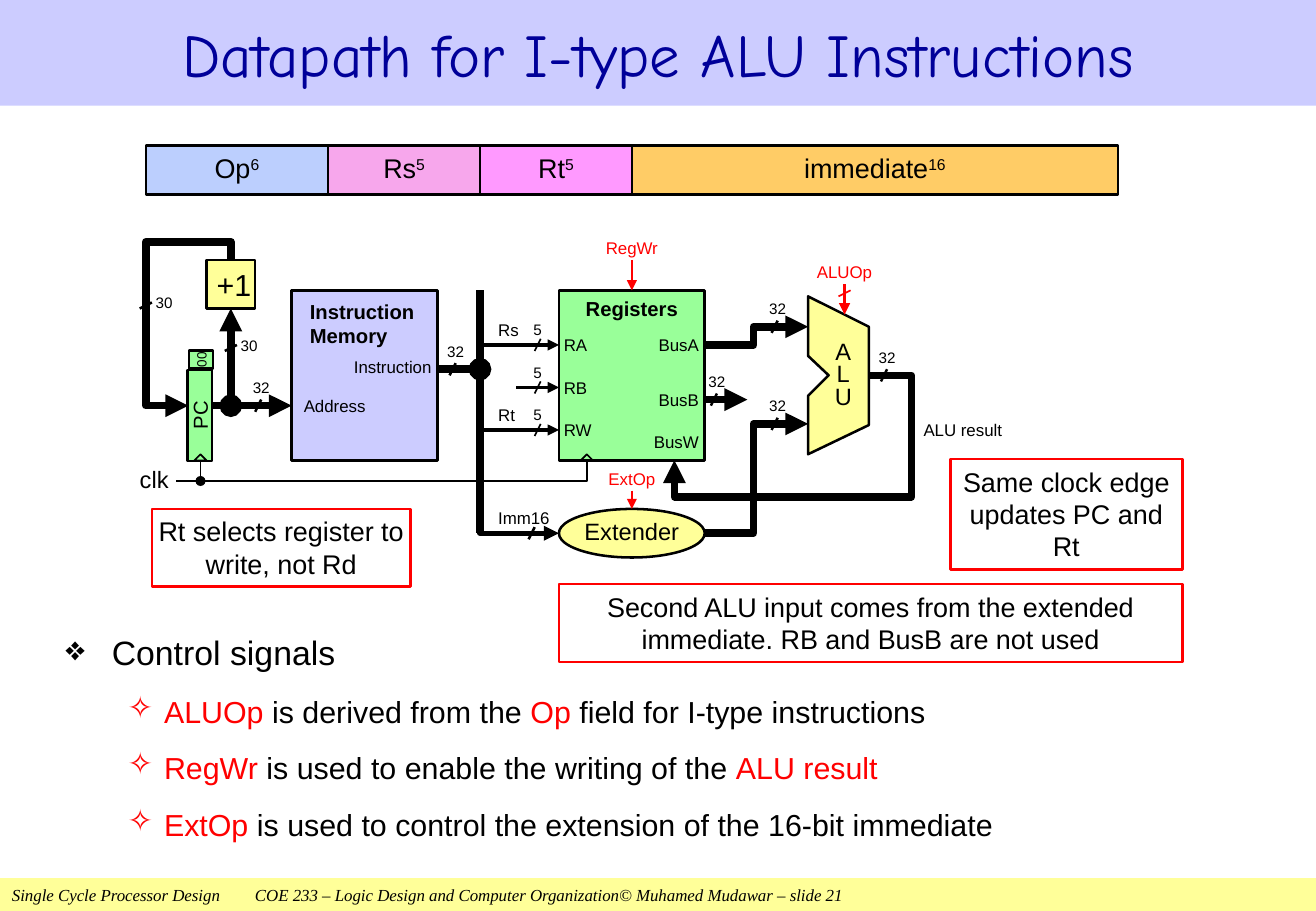
import pptx
import pptx.dml.color
import pptx.enum.dml
import pptx.enum.shapes
import pptx.enum.text
import pptx.oxml.ns
import pptx.util
from lxml import etree

RGBColor = pptx.dml.color.RGBColor
Pt = pptx.util.Pt
SHAPE = pptx.enum.shapes.MSO_SHAPE
ALIGN = pptx.enum.text.PP_ALIGN
ANCHOR = pptx.enum.text.MSO_ANCHOR
qn = pptx.oxml.ns.qn

BLACK = RGBColor(0x00, 0x00, 0x00)
RED = RGBColor(0xFF, 0x00, 0x00)
NAVY = RGBColor(0x00, 0x00, 0x99)
LAVENDER = RGBColor(0xCC, 0xCC, 0xFF)
YELLOW = RGBColor(0xFF, 0xFF, 0x99)
GREEN = RGBColor(0x99, 0xFF, 0x99)
BLUE = RGBColor(0xBC, 0xCF, 0xFE)
PINK = RGBColor(0xF7, 0xA7, 0xEC)
MAGENTA = RGBColor(0xFF, 0x99, 0xFF)
ORANGE = RGBColor(0xFF, 0xCC, 0x66)

CM_PER_UNIT = 2.54
NO_INSET = (0, 0)


def cm(units):
    return pptx.util.Cm(units * CM_PER_UNIT)


def set_text(s, text, size=10, color=BLACK, align=ALIGN.LEFT, font="Arial", bold=None,
             italic=None, inset=NO_INSET, anchor=ANCHOR.MIDDLE, spacing=None, wrap=True):
    tf = s.text_frame
    tf.word_wrap = wrap
    tf.vertical_anchor = anchor
    tf.margin_left = tf.margin_right = cm(inset[0])
    tf.margin_top = tf.margin_bottom = cm(inset[1])
    tf.text = text
    for p in tf.paragraphs:
        p.alignment = align
        p.line_spacing = spacing
        p.font.size = Pt(size)
        p.font.name = font
        p.font.color.rgb = color
        p.font.bold = bold
        p.font.italic = italic
    return s


def add_label(sp, text, x, y, w, h, **style):
    return set_text(sp.add_textbox(cm(x), cm(y), cm(w), cm(h)), text, **style)


def set_paint(s, fill, line, width):
    s.shadow.inherit = False
    if fill is None:
        s.fill.background()
    else:
        s.fill.solid()
        s.fill.fore_color.rgb = fill
    if line is None:
        s.line.fill.background()
    else:
        s.line.color.rgb = line
        s.line.width = Pt(width)
    return s


def add_box(sp, x, y, w, h, fill=None, line=BLACK, width=1.5, kind=SHAPE.RECTANGLE):
    s = sp.add_shape(kind, cm(x), cm(y), cm(w), cm(h))
    return set_paint(s, fill, line, width)


def set_ends(s, head, tail):
    ln = s.line._get_or_add_ln()
    for tag, end in (("a:headEnd", head), ("a:tailEnd", tail)):
        if end:
            etree.SubElement(ln, qn(tag), type=end)


def add_line(sp, x1, y1, x2, y2, width=4.5, color=BLACK, head=None, tail=None):
    s = sp.add_connector(pptx.enum.shapes.MSO_CONNECTOR.STRAIGHT, cm(x1), cm(y1), cm(x2), cm(y2))
    s.line.color.rgb = color
    s.line.width = Pt(width)
    set_ends(s, head, tail)
    etree.SubElement(s._element.spPr, qn("a:effectLst"))
    return s


def add_path(sp, points, width=4.5, fill=None, tail="triangle", close=False):
    start, *rest = [(cm(x), cm(y)) for x, y in points]
    builder = sp.build_freeform(*start)
    builder.add_line_segments(rest, close=close)
    s = set_paint(builder.convert_to_shape(), fill, BLACK, width)
    set_ends(s, None, tail)
    return s


def add_bits(sp, bits, x, y, width=1.5, height=0.2):
    add_line(sp, x + 0.025, y - 0.05, x - 0.025, y + 0.05, width)
    add_label(sp, bits, x - 0.075, y - 0.05 - height, height, height, size=9, align=ALIGN.CENTER)


def add_side_bits(sp, bits, x, y):
    add_line(sp, x + 0.05, y - 0.025, x - 0.05, y + 0.025, 1.5)
    add_label(sp, bits, x + 0.05, y - 0.125, 0.2, 0.2, size=9, align=ALIGN.CENTER)


def add_control(sp, text, x, y, length, width=1, target=None):
    label = add_label(sp, text, x - 0.4, y, 0.8, 0.2, color=RED, align=ALIGN.CENTER)
    s = add_line(sp, x, y + 0.2, x, y + 0.2 + length, width, RED, tail="triangle")
    s.begin_connect(label, 2)
    if target is not None:
        s.end_connect(target, 0)


def add_callout(sp, text, x, y, w, h, side=0.1):
    s = add_box(sp, x, y, w, h, line=RED)
    set_text(s, text, 16, align=ALIGN.CENTER, inset=(side, 0.05), anchor=ANCHOR.TOP)


def add_frame(sp):
    s = add_box(sp, 0, 0, 10.83, 0.87, LAVENDER, None)
    set_text(s, "Datapath for I-type ALU Instructions", 36, NAVY, ALIGN.CENTER, "Comic Neue", inset=(0, 0.05))
    s = add_box(sp, 0, 7.23, 10.83, 0.27, YELLOW, None)
    set_text(s, "Single Cycle Processor Design\tCOE 233 – Logic Design and Computer Organization"
             "© Muhamed Mudawar – slide 21", font="Times New Roman", italic=True, inset=(0.1, 0))
    pPr = s.text_frame.paragraphs[0]._p.get_or_add_pPr()
    tabs = etree.Element(qn("a:tabLst"))
    etree.SubElement(tabs, qn("a:tab"), pos=str(cm(2)), algn="l")
    pPr.insert(0, tabs)


def add_format(sp):
    x = 1.2
    for field, bits, w, fill in (("Op", "6", 1.5, BLUE), ("Rs", "5", 1.25, PINK),
                                 ("Rt", "5", 1.25, MAGENTA), ("immediate", "16", 4, ORANGE)):
        s = set_text(add_box(sp, x, 1.2, w, 0.4, fill), field, 16, align=ALIGN.CENTER, spacing=0.85)
        r = s.text_frame.paragraphs[0].add_run()
        r.text = bits
        r._r.get_or_add_rPr().set("baseline", "30000")
        x += w


def add_fetch(sp):
    add_path(sp, [(1.9, 2.14), (1.9, 1.99), (1.2, 1.99), (1.2, 3.34), (1.55, 3.34)])
    add_side_bits(sp, "30", 1.2, 2.515)
    for text, size, x, y, w in (("PC", 12, 1.27, 3.32, 0.75), ("00", 8, 1.58, 2.86, 0.15)):
        s = set_text(add_box(sp, x, y, w, 0.2, GREEN), text, size, align=ALIGN.CENTER, wrap=False)
        s.rotation = 270
    plus = add_box(sp, 1.7, 2.14, 0.4, 0.4, YELLOW)
    set_text(plus, "+1", 18, align=ALIGN.CENTER).text_frame.margin_left = cm(0.05)
    add_line(sp, 1.9, 3.34, 1.9, 2.54, head="oval", tail="triangle").end_connect(plus, 2)
    add_side_bits(sp, "30", 1.9, 2.865)
    add_box(sp, 2.4, 2.39, 1.2, 1.4, LAVENDER)
    add_label(sp, "Instruction\nMemory", 2.55, 2.39, 0.95, 0.55, size=12, bold=True)
    add_label(sp, "Instruction", 2.6, 2.89, 0.95, 0.25, align=ALIGN.RIGHT)
    add_label(sp, "Address", 2.5, 3.19, 0.75, 0.3)
    add_line(sp, 1.75, 3.34, 2.4, 3.34, tail="triangle")
    add_bits(sp, "32", 2.125, 3.34)
    add_line(sp, 3.6, 3.04, 3.95, 3.04, tail="oval")
    add_bits(sp, "32", 3.725, 3.04)
    add_line(sp, 3.95, 2.39, 3.95, 4.39)


def add_registers(sp):
    regs = add_box(sp, 4.6, 2.39, 1.2, 1.4, GREEN)
    set_text(regs, "Registers", 12, align=ALIGN.CENTER, bold=True, inset=(0.01, 0.05), anchor=ANCHOR.TOP)
    for port, field, x, y in (("RA", "Rs", 3.95, 2.84), ("RB", "", 4.25, 3.19), ("RW", "Rt", 3.95, 3.54)):
        add_line(sp, x, y, 4.6, y, 2.25, tail="triangle")
        add_bits(sp, "5", 4.425, y, 1, 0.15)
        add_label(sp, port, 4.64, y - 0.1, 0.45, 0.2)
        if field:
            add_label(sp, field, 4.1, y - 0.2, 0.2, 0.15)
    for port, y in (("BusA", 2.74), ("BusB", 3.19), ("BusW", 3.54)):
        add_label(sp, port, 5.3, y, 0.45, 0.2, align=ALIGN.RIGHT)
    add_control(sp, "RegWr", 5.2, 1.94, 0.25, target=regs)


def add_execute(sp):
    add_line(sp, 5.8, 3.29, 6.15, 3.29, tail="triangle")
    add_path(sp, [(7.15, 3.09), (7.5, 3.09), (7.5, 4.09), (5.55, 4.09), (5.55, 3.79)])
    add_path(sp, [(5.8, 2.84), (6.2, 2.84), (6.2, 2.69), (6.65, 2.69)])
    add_path(sp, [(5.8, 4.39), (6.2, 4.39), (6.2, 3.49), (6.65, 3.49)])
    add_path(sp, [(3.95, 4.24), (3.95, 4.39), (4.6, 4.39)], 3)
    for x, y in ((5.875, 3.29), (6.375, 2.69), (6.375, 3.49), (7.275, 3.09)):
        add_bits(sp, "32", x, y)
    add_path(sp, [(6.65, 3.74), (7.15, 3.5), (7.15, 2.69), (6.65, 2.44), (6.65, 2.93),
                  (6.82, 3.09), (6.65, 3.26)], 1.5, YELLOW, None, True)
    add_label(sp, "A\nL\nU", 6.73, 2.69, 0.42, 0.81, size=14, align=ALIGN.CENTER, spacing=0.8, wrap=False)
    add_control(sp, "ALUOp", 6.95, 2.14, 0.25, 2.25)
    add_line(sp, 7, 2.39, 6.9, 2.44, 1, RED)
    add_label(sp, "ALU result", 7.6, 3.39, 0.75, 0.3)
    extender = add_box(sp, 4.6, 4.19, 1.2, 0.4, YELLOW, kind=SHAPE.OVAL)
    add_label(sp, "Extender", 4.6, 4.24, 1.2, 0.3, size=14, align=ALIGN.CENTER, spacing=0.8, wrap=False)
    add_control(sp, "ExtOp", 5.2, 3.84, 0.15, target=extender)
    add_line(sp, 4.4, 4.34, 4.35, 4.44, 1.5)
    add_label(sp, "Imm16", 4.1, 4.19, 0.5, 0.15)


def add_clock(sp):
    add_path(sp, [(4.83, 3.79), (4.83, 3.96), (1.45, 3.96)], 1, tail=None)
    add_line(sp, 1.65, 3.79, 1.65, 3.96, 1, tail="oval")
    add_label(sp, "clk", 1.15, 3.84, 0.3, 0.2, size=14)
    for x in (1.6, 4.78):
        add_box(sp, x, 3.74, 0.1, 0.05, width=1, kind=SHAPE.ISOSCELES_TRIANGLE)


def add_bullet(p, runs, size, char, color, margin, indent):
    p.line_spacing = 1.1
    p.space_before = Pt(size * 0.55)
    p.font.size = Pt(size)
    p.font.name = "Arial"
    for text, run_color in runs:
        r = p.add_run()
        r.text = text
        r.font.color.rgb = run_color
    pPr = p._p.get_or_add_pPr()
    pPr.set("marL", str(cm(margin)))
    pPr.set("indent", str(cm(-indent)))
    bullet_color = etree.Element(qn("a:buClr"))
    etree.SubElement(bullet_color, qn("a:srgbClr"), val=str(color))
    bullet = etree.Element(qn("a:buChar"), char=char)
    pPr.find(qn("a:spcBef")).addnext(bullet_color)
    bullet_color.addnext(bullet)


def add_signals(sp):
    tf = add_label(sp, "", 0.54, 5.12, 9.75, 1.93, inset=(0, 0.05), anchor=ANCHOR.TOP).text_frame
    add_bullet(tf.paragraphs[0], [("Control signals", BLACK)], 20, "❖", BLACK, 0.38, 0.38)
    for runs in ([("ALUOp ", RED), ("is derived from the ", BLACK), ("Op", RED),
                  (" field for I-type instructions", BLACK)],
                 [("RegWr", RED), (" is used to enable the writing of the ", BLACK), ("ALU result", RED)],
                 [("ExtOp ", RED), ("is used to control the extension of the 16-bit immediate", BLACK)]):
        p = tf.add_paragraph()
        p.level = 1
        add_bullet(p, runs, 18, "✧", RED, 0.81, 0.3)


def main():
    prs = pptx.Presentation()
    prs.slide_width, prs.slide_height = cm(10.83), cm(7.5)
    sp = prs.slides.add_slide(prs.slide_layouts[6]).shapes
    for add_part in (add_frame, add_format, add_fetch, add_registers, add_execute, add_clock, add_signals):
        add_part(sp)
    add_callout(sp, "Second ALU input comes from the extended immediate. RB and BusB are not used",
                4.6, 4.81, 5.13, 0.64)
    add_callout(sp, "Same clock edge updates PC and Rt", 7.82, 3.78, 1.91, 0.91)
    add_callout(sp, "Rt selects register to write, not Rd", 1.25, 4.19, 2.13, 0.64, 0)
    prs.save("out.pptx")


if __name__ == "__main__":
    main()
